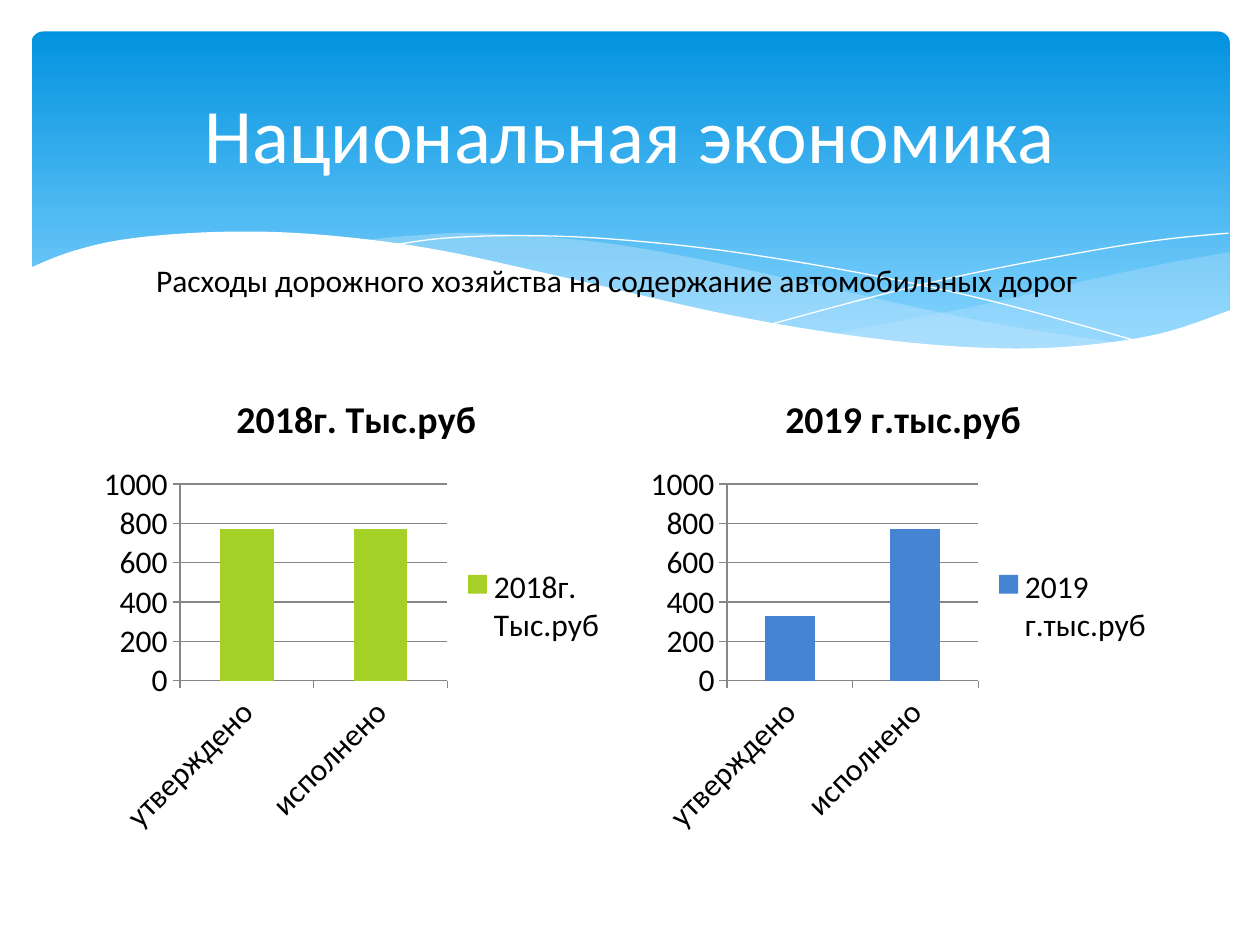
from lxml import etree
from pptx import Presentation
from pptx.chart.data import CategoryChartData
from pptx.dml.color import RGBColor
from pptx.enum.chart import XL_CHART_TYPE as ChartType, XL_LEGEND_POSITION as LegendPosition
from pptx.enum.chart import XL_TICK_MARK as TickMark
from pptx.enum.shapes import MSO_SHAPE as Shape
from pptx.enum.text import MSO_ANCHOR as Anchor, PP_ALIGN as Align
from pptx.oxml.ns import qn
from pptx.util import Inches, Pt

FONT = "Calibri"
BLACK = RGBColor(0x00, 0x00, 0x00)
WHITE = RGBColor(0xFF, 0xFF, 0xFF)
SKY_TOP = RGBColor(0x02, 0x93, 0xE0)
SKY_BOTTOM = RGBColor(0x83, 0xD3, 0xFE)
WAVE = RGBColor(0xC6, 0xE7, 0xFC)
GREEN = RGBColor(0xA5, 0xD0, 0x28)
BLUE = RGBColor(0x45, 0x84, 0xD3)
GRID = RGBColor(0x86, 0x86, 0x86)

# Wave edges, in inches from the top left corner of the header band.
RIGHT_WAVE_TOP = [(9.51, 1.75), (8.96, 1.85), (8.36, 1.98), (7.54, 2.17), (6.36, 2.4)]
RIGHT_WAVE_BOTTOM = [(6.36, 2.4), (7.07, 2.49), (7.89, 2.53), (8.56, 2.48), (9.1, 2.37), (9.51, 2.22)]
MIDDLE_WAVE_TOP = [(8.68, 2.48), (7.5, 2.29), (6.04, 1.97), (5.16, 1.78), (4.4, 1.66),
                   (3.55, 1.6), (3.03, 1.62), (2.61, 1.66)]
MIDDLE_WAVE_BOTTOM = [(2.61, 1.66), (3.37, 1.78), (4.24, 1.97), (5.41, 2.23), (6.4, 2.41),
                      (7.36, 2.51), (8.13, 2.53), (8.68, 2.48)]
FALLING_LINE = [(2.84, 1.7), (3.28, 1.64), (3.91, 1.62), (4.64, 1.65), (5.57, 1.75),
                (6.7, 1.94), (7.7, 2.16), (8.82, 2.47)]
RISING_LINE = [(5.88, 2.32), (6.7, 2.1), (7.51, 1.91), (8.41, 1.74), (8.99, 1.65), (9.5, 1.6)]
WHITE_EDGE = [(9.52, 2.21), (8.95, 2.4), (8.25, 2.5), (7.53, 2.51), (6.63, 2.43), (5.54, 2.25),
              (4.22, 1.95), (3.15, 1.72), (2.25, 1.61), (1.52, 1.59), (0.81, 1.64),
              (0.34, 1.74), (-0.02, 1.88)]
WHITE_CORNERS = [(-0.02, 3.04), (9.52, 3.04)]


def smooth(knots, steps=8):
    """Return points on a Catmull-Rom curve through the knots."""
    ends = [knots[0], *knots, knots[-1]]
    points = [knots[0]]
    for a, b, c, d in zip(ends, ends[1:], ends[2:], ends[3:]):
        for step in range(1, steps + 1):
            t = step / steps
            points.append(tuple(
                0.5 * (2 * q + (r - p) * t + (2 * p - 5 * q + 4 * r - s) * t ** 2
                       + (3 * q - p - 3 * r + s) * t ** 3)
                for p, q, r, s in zip(a, b, c, d)))
    return points


def add_outline(page, box, points, fill=None, opacity=100):
    """Draw a filled outline, or an open white hairline if there is no fill."""
    left, top = box[:2]
    places = [(left + Inches(x), top + Inches(y)) for x, y in points]
    builder = page.shapes.build_freeform(*places[0])
    builder.add_line_segments(places[1:], close=fill is not None)
    shape = builder.convert_to_shape()
    shape.shadow.inherit = False
    if fill is None:
        shape.fill.background()
        shape.line.color.rgb = WHITE
        shape.line.width = Pt(0)
        return
    shape.fill.solid()
    shape.fill.fore_color.rgb = fill
    shape.line.fill.background()
    if opacity < 100:
        color = shape.fill._xPr.find(".//" + qn("a:srgbClr"))
        etree.SubElement(color, qn("a:alpha")).set("val", str(opacity * 1000))


def add_header(page, box):
    band = page.shapes.add_shape(Shape.ROUNDED_RECTANGLE, *box)
    band.adjustments[0] = 0.034
    band.shadow.inherit = False
    band.line.fill.background()
    band.fill.gradient()
    band.fill.gradient_angle = 270
    for stop, color, position in zip(band.fill.gradient_stops, (SKY_TOP, SKY_BOTTOM), (0, 0.9)):
        stop.color.rgb = color
        stop.position = position
    add_outline(page, box, smooth(RIGHT_WAVE_TOP) + smooth(RIGHT_WAVE_BOTTOM), WAVE, 29)
    add_outline(page, box, smooth(MIDDLE_WAVE_TOP) + smooth(MIDDLE_WAVE_BOTTOM), WAVE, 40)
    add_outline(page, box, smooth(FALLING_LINE))
    add_outline(page, box, smooth(RISING_LINE))
    add_outline(page, box, smooth(WHITE_EDGE) + WHITE_CORNERS, WHITE)


def style_font(font, size, color, bold=False):
    font.name = FONT
    font.size = Pt(size)
    font.bold = bold
    font.color.rgb = color


def place_title(page, box, text):
    title = page.shapes.title
    title.left, title.top, title.width, title.height = box
    page.shapes._spTree.append(title._element)  # bring in front of the header
    frame = title.text_frame
    frame.text = text
    frame.vertical_anchor = Anchor.MIDDLE
    para = frame.paragraphs[0]
    para.alignment = Align.CENTER
    style_font(para.runs[0].font, 44, WHITE)


def add_spending_chart(page, box, name, values, color):
    data = CategoryChartData()
    data.categories = ["утверждено", "исполнено"]
    data.add_series(name, values)
    chart = page.shapes.add_chart(ChartType.COLUMN_STACKED, *box, data).chart
    style_font(chart.font, 18, BLACK)
    chart.has_title = True
    chart.chart_title.text_frame.text = name
    style_font(chart.chart_title.text_frame.paragraphs[0].runs[0].font, 21.6, BLACK, bold=True)
    chart.chart_title.include_in_layout = False
    chart.has_legend = True
    chart.legend.position = LegendPosition.RIGHT
    chart.legend.include_in_layout = False
    for axis in (chart.category_axis, chart.value_axis):
        axis.major_tick_mark = TickMark.OUTSIDE
        axis.format.line.color.rgb = GRID
    chart.value_axis.has_major_gridlines = True
    chart.value_axis.major_gridlines.format.line.color.rgb = GRID
    plot = chart.plots[0]
    plot.vary_by_categories = False
    plot.gap_width = 150
    plot.overlap = 100
    fill = plot.series[0].format.fill
    fill.solid()
    fill.fore_color.rgb = color


def add_subtitle(page, box, text):
    frame = page.shapes.add_textbox(*box).text_frame
    frame.word_wrap = False
    frame.text = text
    style_font(frame.paragraphs[0].runs[0].font, 18, BLACK)


def inch_box(*lengths):
    return tuple(Inches(length) for length in lengths)


def main():
    deck = Presentation()
    deck.slide_width, deck.slide_height = Inches(10), Inches(7.5)
    page = deck.slides.add_slide(deck.slide_layouts[5])
    add_header(page, inch_box(0.25, 0.25, 9.51, 2.7))
    place_title(page, inch_box(0.5, 0.37, 9, 1.37), "Национальная экономика")
    charts = [("2018г. Тыс.руб", (770, 770), GREEN), ("2019 г.тыс.руб", (330, 770), BLUE)]
    for column, (name, values, color) in enumerate(charts):
        box = inch_box(0.74 + 4.34 * column, 2.93, 4.18, 3.77)
        add_spending_chart(page, box, name, values, color)
    add_subtitle(page, inch_box(1.14, 2.02, 7.88, 0.4),
                 "Расходы дорожного хозяйства на содержание автомобильных дорог")
    deck.save("out.pptx")


if __name__ == "__main__":
    main()
